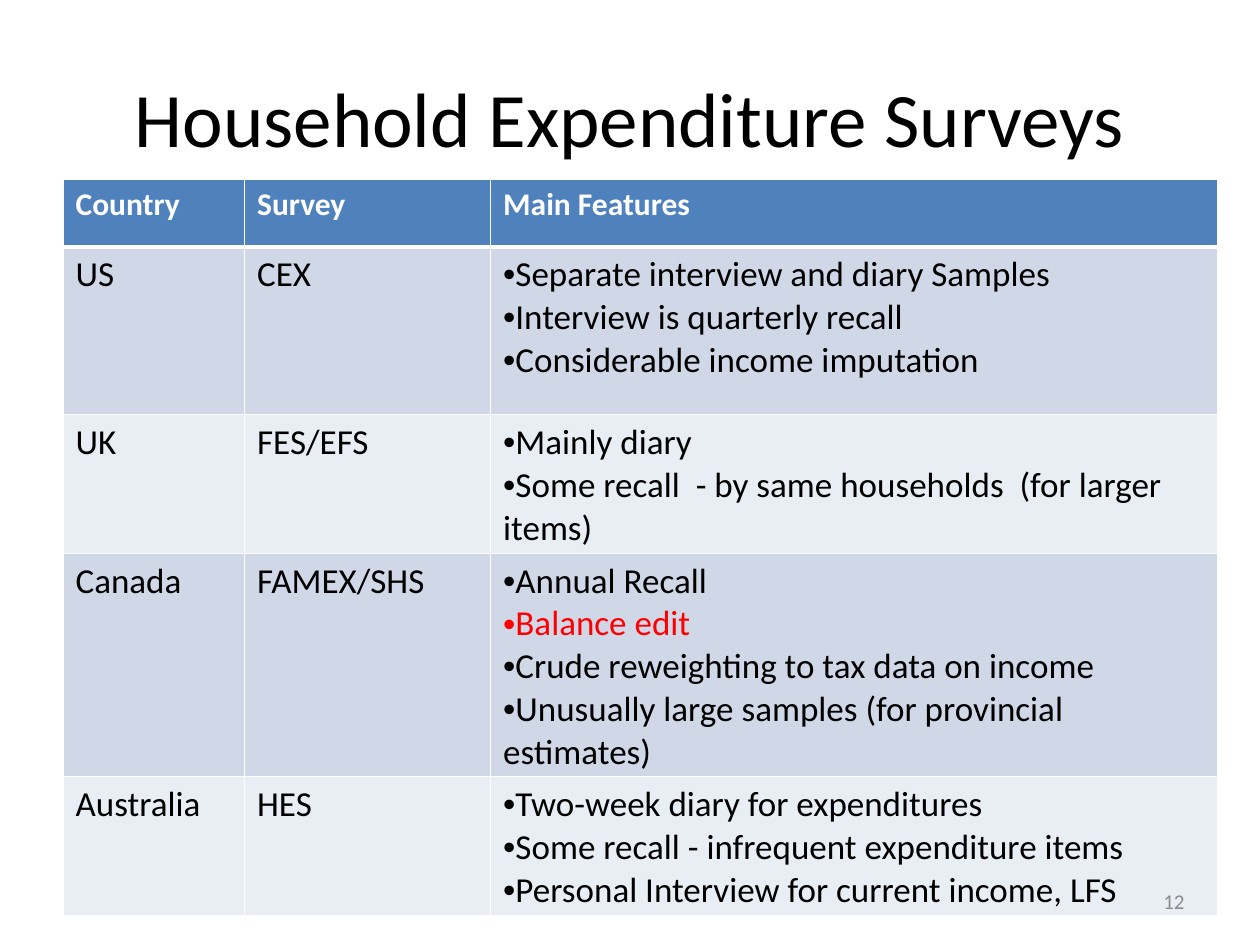
from dataclasses import dataclass

from lxml import etree
from pptx import Presentation
from pptx import util as u
from pptx.dml.color import RGBColor
from pptx.enum import text
from pptx.oxml.ns import qn

TITLE = "Household Expenditure Surveys"
PAGE_NUMBER = "12"
HEADINGS = ["Country", "Survey", "Main Features"]
SURVEYS = [
    ("US", "CEX", [
        "Separate interview and diary Samples",
        "Interview is quarterly recall",
        "Considerable income imputation",
    ]),
    ("UK", "FES/EFS", [
        "Mainly diary",
        "Some recall  - by same households  (for larger items)",
    ]),
    ("Canada", "FAMEX/SHS", [
        "Annual Recall",
        "Balance edit",
        "Crude reweighting to tax data on income",
        "Unusually large samples (for provincial estimates)",
    ]),
    ("Australia", "HES", [
        "Two-week diary for expenditures",
        "Some recall - infrequent expenditure items",
        "Personal Interview for current income, LFS",
    ]),
]
HIGHLIGHTED = {"Balance edit"}
COLUMN_WIDTHS = [3.66, 4.96, 14.66]
ROW_HEIGHTS = [1.37, 3.38, 2.79, 4.5, 2.79]


@dataclass(frozen=True)
class Theme:
    font: str = "Calibri"
    ink: str = "000000"
    paper: str = "FFFFFF"
    accent: str = "FF0000"
    muted: str = "8C8C8C"
    header: str = "4F81BD"
    bands: tuple = ("D0D8E8", "E9EDF4")
    title_size: int = 44
    header_size: int = 18
    body_size: int = 20
    number_size: int = 12
    thin: int = 1
    thick: int = 3


THEME = Theme()


def add_span(para, words, size, color, bold=False):
    span = para.add_run()
    span.text = words
    span.font.name = THEME.font
    span.font.size = u.Pt(size)
    span.font.bold = bold
    span.font.color.rgb = RGBColor.from_string(color)


def add_label(page, words, place, size, color, align):
    box = page.shapes.add_textbox(*(u.Cm(length) for length in place))
    frame = box.text_frame
    frame.word_wrap = True
    frame.vertical_anchor = text.MSO_ANCHOR.MIDDLE
    para = frame.paragraphs[0]
    para.alignment = align
    add_span(para, words, size, color)


def add_bullet(para):
    properties = para._p.get_or_add_pPr()
    properties.set("marL", "0")
    properties.set("indent", "0")
    font = etree.SubElement(properties, qn("a:buFont"))
    font.set("typeface", "Arial")
    etree.SubElement(properties, qn("a:buChar")).set("char", "•")


def style_cell(cell, fill, top, bottom):
    """Fill the cell and draw its four borders; top and bottom are in points."""
    properties = cell._tc.get_or_add_tcPr()
    widths = {"L": THEME.thin, "R": THEME.thin, "T": top, "B": bottom}
    for side, width in widths.items():
        line = etree.SubElement(properties, qn(f"a:ln{side}"))
        line.set("w", str(u.Pt(width)))
        paint = etree.SubElement(line, qn("a:solidFill"))
        etree.SubElement(paint, qn("a:srgbClr")).set("val", THEME.paper)
    cell.fill.solid()
    cell.fill.fore_color.rgb = RGBColor.from_string(fill)


def write_features(cell, features):
    frame = cell.text_frame
    for index, feature in enumerate(features):
        para = frame.add_paragraph() if index else frame.paragraphs[0]
        add_bullet(para)
        color = THEME.accent if feature in HIGHLIGHTED else THEME.ink
        add_span(para, feature, THEME.body_size, color)


def add_survey_table(page):
    table = page.shapes.add_table(
        len(ROW_HEIGHTS), len(COLUMN_WIDTHS), u.Cm(1.27), u.Cm(3.61),
        u.Cm(sum(COLUMN_WIDTHS)), u.Cm(sum(ROW_HEIGHTS))).table
    for column, width in zip(table.columns, COLUMN_WIDTHS):
        column.width = u.Cm(width)
    for row, height in zip(table.rows, ROW_HEIGHTS):
        row.height = u.Cm(height)

    for cell, heading in zip(table.rows[0].cells, HEADINGS):
        style_cell(cell, THEME.header, THEME.thin, THEME.thick)
        add_span(cell.text_frame.paragraphs[0], heading,
                 THEME.header_size, THEME.paper, bold=True)

    for index, (*names, features) in enumerate(SURVEYS):
        cells = list(table.rows[index + 1].cells)
        top = THEME.thin if index else THEME.thick
        for cell in cells:
            style_cell(cell, THEME.bands[index % 2], top, THEME.thin)
        for cell, name in zip(cells, names):
            add_span(cell.text_frame.paragraphs[0], name,
                     THEME.body_size, THEME.ink)
        write_features(cells[-1], features)


def main():
    deck = Presentation()
    deck.slide_width, deck.slide_height = u.Cm(25.4), u.Cm(19.05)
    page = deck.slides.add_slide(deck.slide_layouts[6])
    add_label(page, TITLE, (1.27, 0.76, 22.86, 3.18),
              THEME.title_size, THEME.ink, text.PP_ALIGN.CENTER)
    add_survey_table(page)
    add_label(page, PAGE_NUMBER, (18.2, 17.66, 5.93, 1.01),
              THEME.number_size, THEME.muted, text.PP_ALIGN.RIGHT)
    deck.save("out.pptx")


if __name__ == "__main__":
    main()
